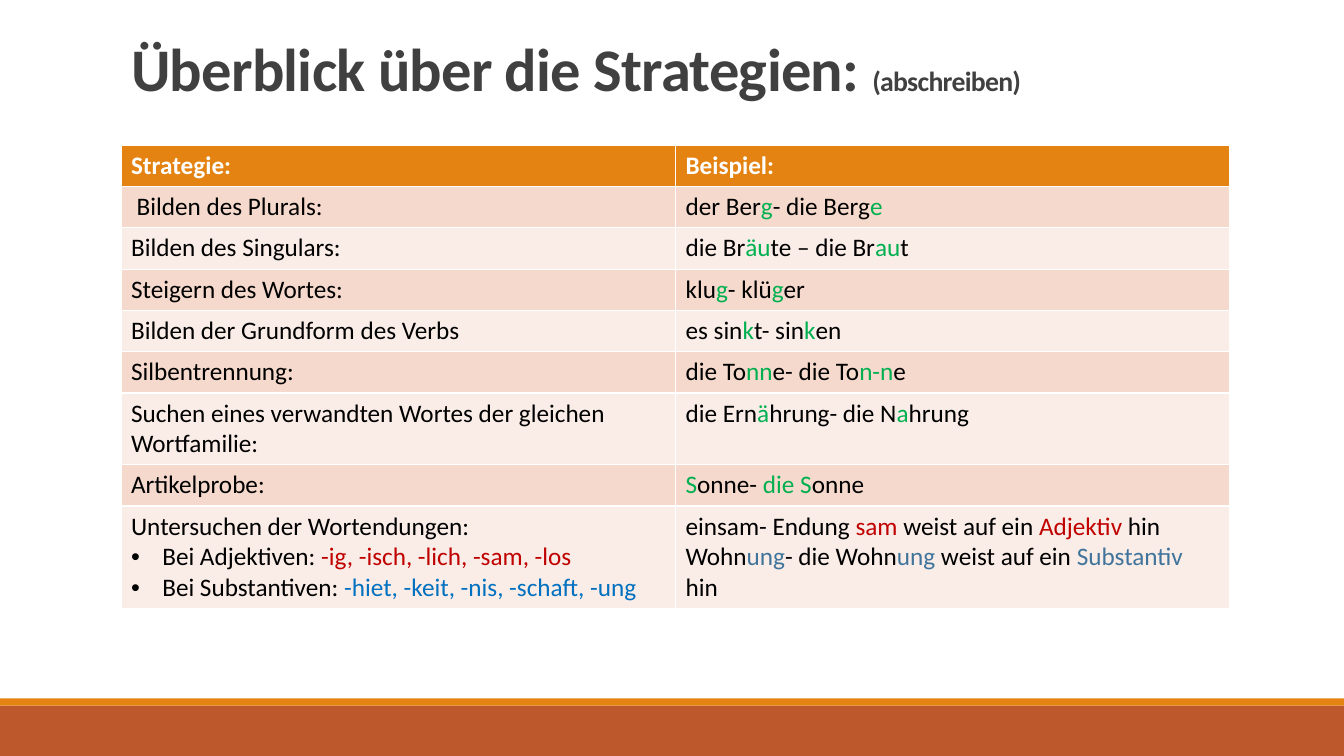
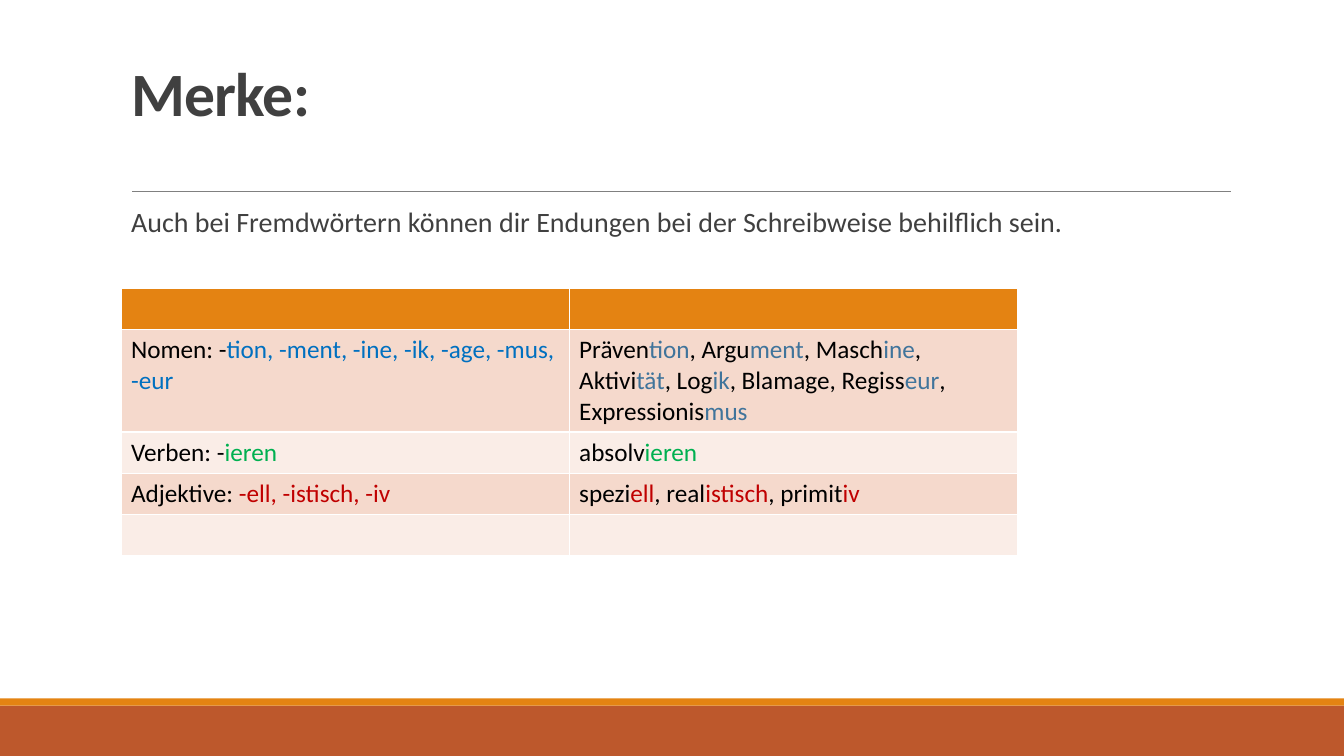
from pptx import Presentation
from pptx.dml.color import RGBColor
from pptx.enum.shapes import MSO_CONNECTOR, MSO_SHAPE
from pptx.enum.text import MSO_ANCHOR, MSO_AUTO_SIZE, PP_ALIGN
from pptx.oxml.ns import qn
from pptx.util import Inches, Pt
from lxml import etree

RECT = MSO_SHAPE.RECTANGLE
STRAIGHT = MSO_CONNECTOR.STRAIGHT
LEFT = PP_ALIGN.LEFT
TOP, BOTTOM = MSO_ANCHOR.TOP, MSO_ANCHOR.BOTTOM
NO_FIT = MSO_AUTO_SIZE.NONE

# Shared look
FONT = "Calibri"
RUST = RGBColor(0xBD, 0x58, 0x2C)
ORANGE = RGBColor(0xE4, 0x83, 0x12)
GREY = RGBColor(0x80, 0x80, 0x80)
DARK = RGBColor(0x40, 0x40, 0x40)
BLACK = RGBColor(0x00, 0x00, 0x00)
WHITE = RGBColor(0xFF, 0xFF, 0xFF)
GREEN = RGBColor(0x00, 0xB0, 0x50)
RED = RGBColor(0xC0, 0x00, 0x00)
BLUE = RGBColor(0x00, 0x70, 0xC0)
STEEL = RGBColor(0x40, 0x74, 0x9B)
ROW_FILLS = (RGBColor(0xF5, 0xD9, 0xCC), RGBColor(0xFA, 0xED, 0xE7))

SLIDE_W, SLIDE_H = 13.33, 7.5
MARGIN, CONTENT_W = 1.2, 11
ROW_H = 0.41
TITLE_ONLY, TITLE_AND_CONTENT = 5, 1

# A cell is a list of paragraphs: (text, accent colour, bulleted).
# Every second part between bars takes the accent colour.
STRATEGIES = [
    ([("Strategie:",)], [("Beispiel:",)]),
    ([(" Bilden des Plurals:",)], [("der Ber|g|- die Berg|e", GREEN)]),
    ([("Bilden des Singulars:",)], [("die Br|äu|te – die Br|au|t", GREEN)]),
    ([("Steigern des Wortes:",)], [("klu|g|- klü|g|er", GREEN)]),
    ([("Bilden der Grundform des Verbs",)], [("es sin|k|t- sin|k|en", GREEN)]),
    ([("Silbentrennung:",)], [("die To|nn|e- die To|n-n|e", GREEN)]),
    ([("Suchen eines verwandten Wortes der gleichen Wortfamilie:",)],
     [("die Ern|ä|hrung- die N|a|hrung", GREEN)]),
    ([("Artikelprobe:",)], [("|S|onne- |die S|onne", GREEN)]),
    ([("Untersuchen der Wortendungen:",),
      ("Bei Adjektiven: |-ig, -isch, -lich, -sam, -los", RED, True),
      ("Bei Substantiven: |-hiet, -keit, -nis, -schaft, -ung", BLUE, True)],
     [("einsam- Endung |sam |weist auf ein |Adjektiv |hin", RED),
      ("Wohn|ung|- die Wohn|ung |weist auf ein |Substantiv |hin", STEEL)]),
]
LOANWORDS = [
    ([], []),
    ([("Nomen: -|tion, -ment, -ine, -ik, -age, -mus, -eur", BLUE)],
     [("Präven|tion|, Argu|ment|, Masch|ine|, Aktivi|tät|, Log|ik"
       "|, Blamage, Regiss|eur|, Expressionis|mus", STEEL)]),
    ([("Verben: -|ieren", GREEN)], [("absolv|ieren", GREEN)]),
    ([("Adjektive: |-ell, -istisch, -iv", RED)],
     [("spezi|ell|, real|istisch|, primit|iv", RED)]),
    ([], []),
]


def add_run(p, text, size=18, color=BLACK, bold=False, spacing=None):
    r = p.add_run()
    r.text = text
    r.font.name = FONT
    r.font.size = Pt(size)
    r.font.bold = bold
    r.font.color.rgb = color
    if spacing is not None:
        r.font._element.set("spc", str(int(spacing * 100)))


def set_bullet(p, char=None, margin=0.0, indent=0.0):
    pPr = p._p.get_or_add_pPr()
    pPr.set("marL", str(Inches(margin)))
    pPr.set("indent", str(Inches(indent)))
    if char is None:
        etree.SubElement(pPr, qn("a:buNone"))
    else:
        etree.SubElement(pPr, qn("a:buFont"), typeface="Arial")
        etree.SubElement(pPr, qn("a:buChar"), char=char)


def place(sp, left, top, width, height):
    sp.left, sp.top = Inches(left), Inches(top)
    sp.width, sp.height = Inches(width), Inches(height)


def add_band(slide, top, height, color):
    sp = slide.shapes.add_shape(RECT, 0, Inches(top), Inches(SLIDE_W), Inches(height))
    sp.shadow.inherit = False
    sp.fill.solid()
    sp.fill.fore_color.rgb = color
    sp.line.fill.background()


def add_rule(slide, left, right, top):
    line = slide.shapes.add_connector(
        STRAIGHT, Inches(left), Inches(top), Inches(right), Inches(top))
    line.line.color.rgb = GREY
    line.line.width = Pt(0.5)
    etree.SubElement(line._element.spPr, qn("a:effectLst"))


def set_title(slide, height, runs):
    sp = slide.shapes.title
    place(sp, MARGIN, 0.31, CONTENT_W, height)
    tf = sp.text_frame
    tf.auto_size = NO_FIT
    tf.vertical_anchor = BOTTOM
    p = tf.paragraphs[0]
    p.alignment = LEFT
    p.line_spacing = 0.85
    for text, size in runs:
        add_run(p, text, size=size, color=DARK, bold=True, spacing=-0.5)


def set_body(slide, text):
    sp = slide.placeholders[1]
    place(sp, MARGIN, 2.02, CONTENT_W, 4.4)
    tf = sp.text_frame
    tf.auto_size = NO_FIT
    tf.vertical_anchor = TOP
    tf.margin_left = tf.margin_right = 0
    p = tf.paragraphs[0]
    p.line_spacing = 0.9
    p.space_before, p.space_after = Pt(12), Pt(2)
    set_bullet(p, margin=0.1)
    add_run(p, text, size=20, color=DARK)


def fill_paragraph(p, text, accent=BLACK, bulleted=False, base=BLACK, bold=False):
    if bulleted:
        set_bullet(p, "•", margin=0.31, indent=-0.31)
    for i, part in enumerate(text.split("|")):
        if part:
            add_run(p, part, color=accent if i % 2 else base, bold=bold)


def add_grid(slide, top, width, rows):
    table = slide.shapes.add_table(
        len(rows), 2, Inches(MARGIN), Inches(top),
        Inches(width), Inches(ROW_H * len(rows))).table
    for i, row in enumerate(rows):
        header = i == 0
        for j, paragraphs in enumerate(row):
            cell = table.cell(i, j)
            cell.fill.solid()
            cell.fill.fore_color.rgb = ORANGE if header else ROW_FILLS[(i - 1) % 2]
            tf = cell.text_frame
            for k, paragraph in enumerate(paragraphs):
                p = tf.add_paragraph() if k else tf.paragraphs[0]
                fill_paragraph(p, *paragraph, base=WHITE if header else BLACK, bold=header)


def new_slide(prs, layout):
    slide = prs.slides.add_slide(prs.slide_layouts[layout])
    add_band(slide, 7, 0.5, RUST)
    add_band(slide, 6.93, 0.07, ORANGE)
    add_rule(slide, 1.31, 12.21, 1.9)
    return slide


def main():
    prs = Presentation()
    prs.slide_width, prs.slide_height = Inches(SLIDE_W), Inches(SLIDE_H)

    # Strategies
    slide = new_slide(prs, TITLE_ONLY)
    set_title(slide, 0.77, [("Überblick über die Strategien: ", 43.2),
                            ("(abschreiben)", 19.8)])
    add_grid(slide, 1.44, CONTENT_W, STRATEGIES)

    # Loanword endings
    slide = new_slide(prs, TITLE_AND_CONTENT)
    set_title(slide, 1.02, [("Merke:", 44)])
    set_body(slide, "Auch bei Fremdwörtern können dir Endungen bei der "
                    "Schreibweise behilflich sein.")
    add_grid(slide, 2.86, 8.89, LOANWORDS)

    prs.save("out.pptx")


if __name__ == "__main__":
    main()
